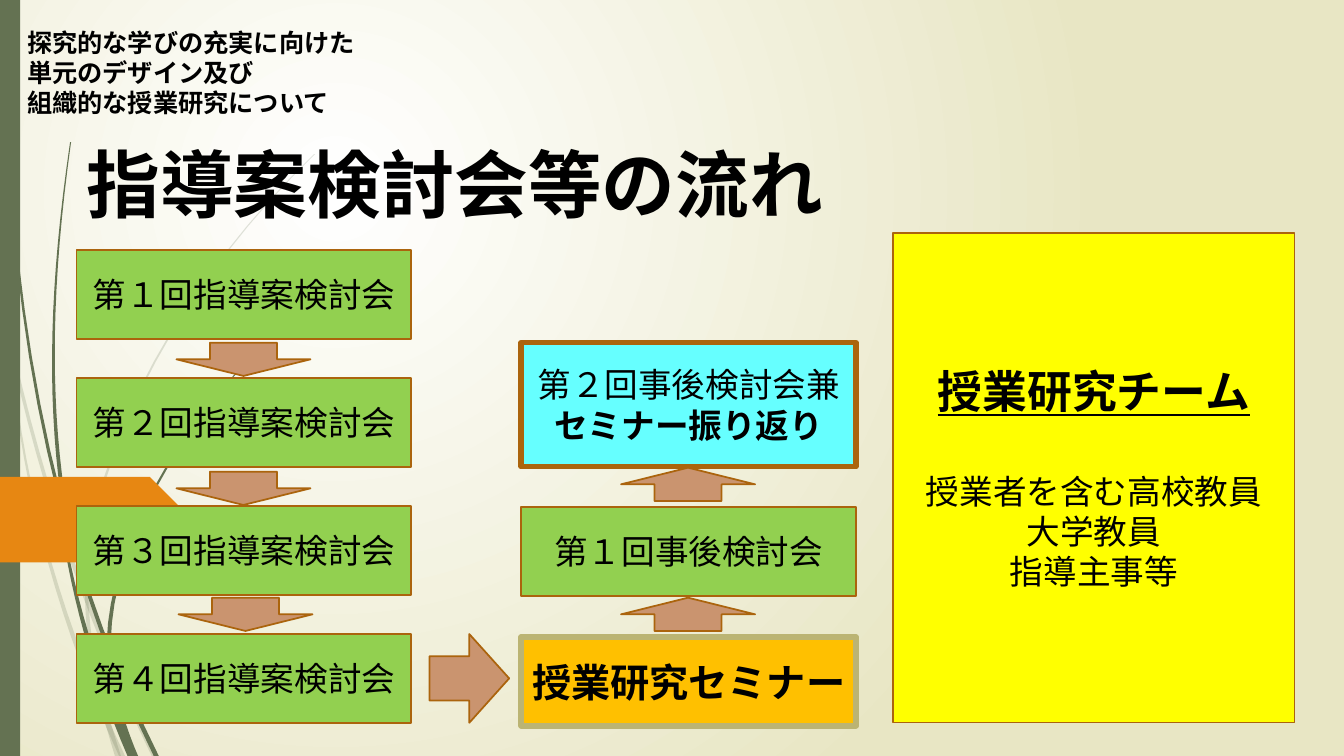
import pptx
import pptx.dml.color
import pptx.enum.shapes
import pptx.enum.text
import pptx.oxml
import pptx.oxml.ns
import pptx.util

Inches = pptx.util.Inches
RGBColor = pptx.dml.color.RGBColor
SHAPE = pptx.enum.shapes.MSO_SHAPE
ANCHOR = pptx.enum.text.MSO_ANCHOR
ALIGN = pptx.enum.text.PP_ALIGN
qn = pptx.oxml.ns.qn
DRAWING = pptx.oxml.ns.nsdecls("a")

BLACK = RGBColor(0x00, 0x00, 0x00)
WHITE = RGBColor(0xFF, 0xFF, 0xFF)
CREAM = RGBColor(0xE8, 0xE6, 0xC4)
MOSS = RGBColor(0x64, 0x72, 0x52)
ORANGE = RGBColor(0xE7, 0x87, 0x12)
GREEN = RGBColor(0x92, 0xD0, 0x50)
CYAN = RGBColor(0x66, 0xFF, 0xFF)
GOLD = RGBColor(0xFF, 0xC0, 0x00)
YELLOW = RGBColor(0xFF, 0xFF, 0x00)
CLAY = RGBColor(0xCA, 0x94, 0x6F)
BROWN = RGBColor(0xAB, 0x64, 0x0D)
KHAKI = RGBColor(0xBB, 0xB4, 0x73)


def add_text(para, text, font="Quicksand", size=24, bold=False, underline=False, align=ALIGN.CENTER):
    para.alignment = align
    span = para.add_run()
    span.text = text
    span.font.name = font
    span.font.size = pptx.util.Pt(size)
    span.font.bold = bold
    span.font.underline = underline
    span.font.color.rgb = BLACK
    east_asian = pptx.oxml.parse_xml(f'<a:ea {DRAWING} typeface="{font}"/>')
    span.font._element.find(qn("a:latin")).addnext(east_asian)


def paint(shape, fill, line=None, width=1.25):
    shape.shadow.inherit = False
    shape.fill.solid()
    shape.fill.fore_color.rgb = fill
    if line is None:
        shape.line.fill.background()
    else:
        shape.line.color.rgb = line
        shape.line.width = pptx.util.Pt(width)


deck = pptx.Presentation()
deck.slide_width = Inches(13.33)
deck.slide_height = Inches(7.5)
page = deck.slides.add_slide(deck.slide_layouts[5])
shapes = page.shapes

# Background: a round glow centred in the upper left
glow = page.background.fill
glow.gradient()
for stop, color, position in zip(glow.gradient_stops, (WHITE, CREAM), (0, 1)):
    stop.color.rgb = color
    stop.position = position
gradient = page.element.find(".//" + qn("a:gradFill"))
gradient.replace(gradient.find(qn("a:lin")), pptx.oxml.parse_xml(
    f'<a:path {DRAWING} path="circle">'
    '<a:fillToRect l="50000" t="50000" r="100000" b="100000"/></a:path>'))

# Grass: each blade follows a Bezier curve (tip, two handles, root)
# and widens evenly from the tip to the root
PALE, FULL = 20, 100  # opacity in percent
STEPS = 16
blades = [
    # opacity, tip width, root width, tip, handle, handle, root
    (PALE, 0.03, 0.05, (0, 2.9), (0.35, 4.7), (0.85, 6.1), (1.53, 7.5)),
    (PALE, 0.01, 0.06, (0.11, 3.5), (0.22, 4.9), (0.65, 6.3), (1.21, 7.5)),
    (PALE, 0.01, 0.03, (3.12, 1.53), (1.9, 2.7), (0.87, 4.4), (0.86, 5.86)),
    (PALE, 0.03, 0.06, (0.86, 5.86), (0.86, 6.3), (0.95, 6.8), (1.17, 7.5)),
    (FULL, 0.01, 0.05, (0.04, 0), (0.05, 2.9), (0.45, 5.3), (1.55, 7.5)),
    (FULL, 0.01, 0.07, (0.57, 4.77), (0.63, 5.6), (0.9, 6.6), (1.3, 7.5)),
    (FULL, 0.01, 0.04, (0.7, 1.41), (0.5, 2.8), (0.48, 3.9), (0.62, 4.9)),
    (FULL, 0.01, 0.04, (2.6, 3.44), (1.8, 4.2), (1.1, 5.4), (1.08, 6.36)),
    (FULL, 0.04, 0.06, (1.08, 6.36), (1.08, 6.7), (1.17, 7.1), (1.34, 7.5)),
]
for opacity, tip_width, root_width, *curve in blades:
    left_edge, right_edge = [], []
    for step in range(STEPS + 1):
        t = step / STEPS
        weights = ((1 - t) ** 3, 3 * t * (1 - t) ** 2, 3 * t ** 2 * (1 - t), t ** 3)
        x = sum(weight * point[0] for weight, point in zip(weights, curve))
        y = sum(weight * point[1] for weight, point in zip(weights, curve))
        half = (tip_width + (root_width - tip_width) * t) / 2
        left_edge.append((Inches(max(x - half, 0)), Inches(y)))
        right_edge.append((Inches(x + half), Inches(y)))
    outline = left_edge + right_edge[::-1]
    builder = shapes.build_freeform(*outline[0])
    builder.add_line_segments(outline[1:])
    blade = builder.convert_to_shape()
    paint(blade, MOSS)
    tint = blade.element.spPr.find(".//" + qn("a:srgbClr"))
    tint.append(pptx.oxml.parse_xml(f'<a:alpha {DRAWING} val="{opacity * 1000}"/>'))

# Side band and the orange tab that lies on it
side_band = shapes.add_shape(SHAPE.RECTANGLE, 0, 0, Inches(0.2), Inches(7.5))
paint(side_band, MOSS)
orange_tab = shapes.add_shape(SHAPE.PENTAGON, 0, Inches(4.73), Inches(1.91), Inches(0.85))
paint(orange_tab, ORANGE)

# Theme of the session
theme = shapes.add_textbox(Inches(0.17), Inches(0.22), Inches(4.62), Inches(0.95)).text_frame
theme.word_wrap = True
heading = dict(font="Arial", bold=True, align=ALIGN.LEFT)
para = theme.paragraphs[0]
add_text(para, "探究的な学びの充実に向けた", size=18, **heading)
para.add_line_break()
add_text(para, "単元のデザイン及び", size=18, **heading)
add_text(theme.add_paragraph(), "組織的な授業研究について", size=18, **heading)

# Title, brought in front of the grass
title = shapes.title
shapes.element.append(title.element)
title.left, title.top = Inches(0.76), Inches(1.29)
title.width, title.height = Inches(12.33), Inches(1.01)
title.text_frame.auto_size = pptx.enum.text.MSO_AUTO_SIZE.NONE
title.text_frame.vertical_anchor = ANCHOR.BOTTOM
add_text(title.text_frame.paragraphs[0], "指導案検討会等の流れ", size=52.6, **heading)

# Boxes: place, fill, line, line width, and paragraphs made of (text, format) spans
PLAN_LEFT, REVIEW_LEFT = 0.76, 5.17
BOX_WIDTH, BOX_HEIGHT = 3.32, 0.88
PLAN_TOP, PLAN_PITCH = 2.48, 1.27
plain, strong = {}, {"bold": True}
seminar_style = {"size": 28, "bold": True}
team_style = {"font": "Noto Sans CJK JP", "size": 32, "bold": True, "underline": True}

boxes = [((PLAN_LEFT, PLAN_TOP + PLAN_PITCH * step, BOX_WIDTH, BOX_HEIGHT), GREEN, BROWN, 1.25,
          [[(f"第{number}回指導案検討会", plain)]])
         for step, number in enumerate("１２３４")]
boxes += [
    ((REVIEW_LEFT, 3.4, BOX_WIDTH, 1.23), CYAN, BROWN, 4,
     [[("第２回事後検討会兼", plain), ("セミナー振り返り", strong)]]),
    ((REVIEW_LEFT, 5.03, BOX_WIDTH, BOX_HEIGHT), GREEN, BROWN, 1.25,
     [[("第１回事後検討会", plain)]]),
    ((REVIEW_LEFT, 6.32, BOX_WIDTH, BOX_HEIGHT), GOLD, KHAKI, 4,
     [[("授業研究セミナー", seminar_style)]]),
    ((8.86, 2.31, 3.98, 4.86), YELLOW, BROWN, 1.25,
     [[("授業研究チーム", team_style)], [("授業者を含む高校教員", plain)],
      [("大学教員", plain)], [("指導主事等", plain)]]),
]
for place, fill, line, width, paragraphs in boxes:
    box = shapes.add_shape(SHAPE.RECTANGLE, *map(Inches, place))
    paint(box, fill, line, width)
    frame = box.text_frame
    frame.word_wrap = True
    frame.vertical_anchor = ANCHOR.MIDDLE
    for index, spans in enumerate(paragraphs):
        para = frame.paragraphs[0] if index == 0 else frame.add_paragraph()
        if index == 1:  # gap between the team name and its members
            para.space_before = pptx.util.Pt(38)
        for text, style in spans:
            add_text(para, text, **style)

# Block arrows: down the plans, across to the seminar, up the reviews
ARROW_WIDTH, ARROW_HEIGHT = 1.33, 0.33
arrows = [(SHAPE.RIGHT_ARROW, 4.26, 6.29, 0.79, BOX_HEIGHT)]
for kind, left, top in ((SHAPE.DOWN_ARROW, 1.75, 3.4), (SHAPE.DOWN_ARROW, 1.75, 4.68),
                        (SHAPE.DOWN_ARROW, 1.77, 5.93),
                        (SHAPE.UP_ARROW, 6.16, 4.64), (SHAPE.UP_ARROW, 6.16, 5.93)):
    arrows.append((kind, left, top, ARROW_WIDTH, ARROW_HEIGHT))
for kind, *place in arrows:
    paint(shapes.add_shape(kind, *map(Inches, place)), CLAY, BROWN)

deck.save("out.pptx")
